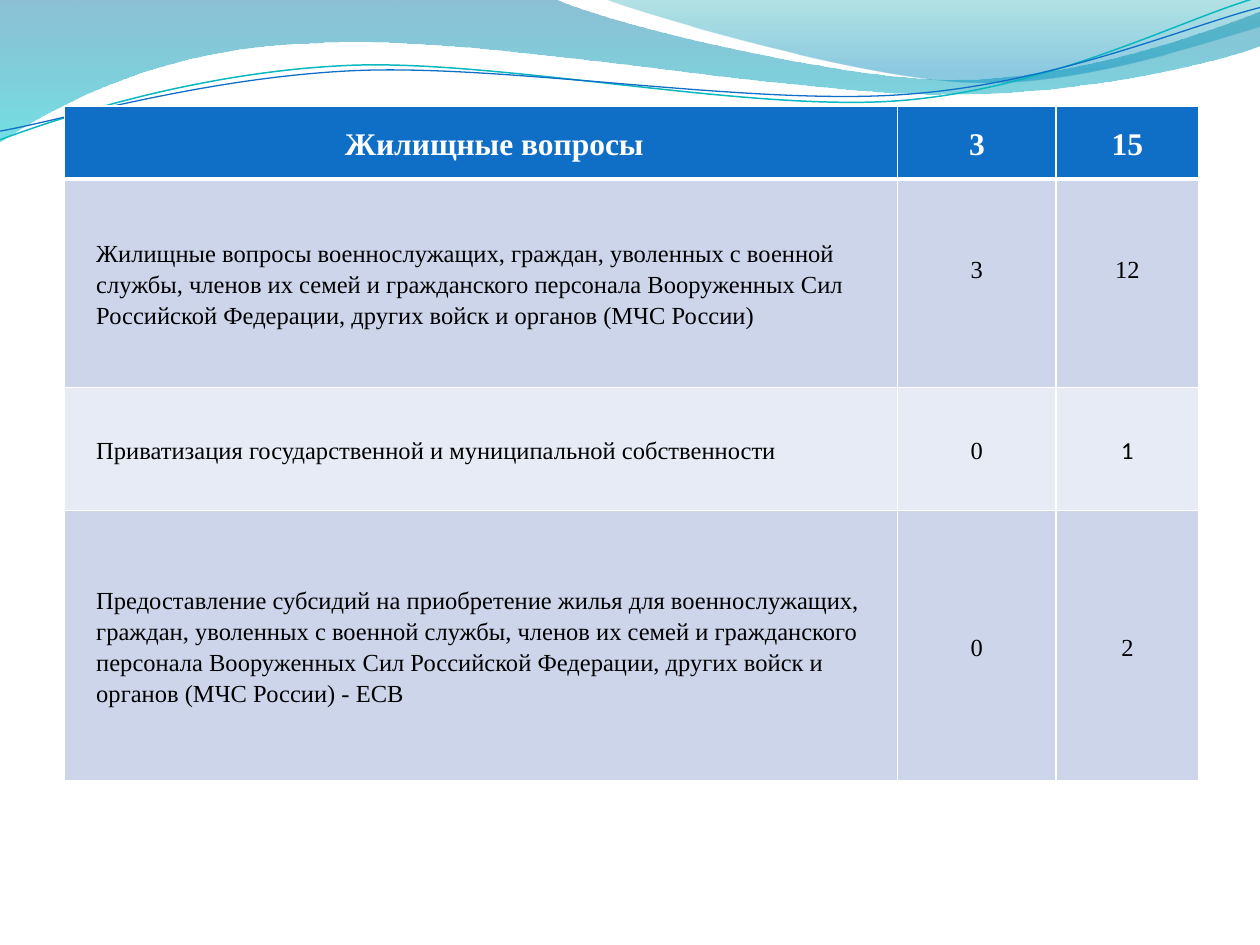
from dataclasses import dataclass

import lxml.etree
import pptx
import pptx.dml.color
import pptx.enum.text
import pptx.oxml.ns
import pptx.util

Pt = pptx.util.Pt
qn = pptx.oxml.ns.qn
ALIGN = pptx.enum.text.PP_ALIGN
MIDDLE = pptx.enum.text.MSO_ANCHOR.MIDDLE


@dataclass(frozen=True)
class Theme:
    serif: str = "Times New Roman"
    sans: str = "Calibri"
    header_size: int = 18
    body_size: int = 14
    blue: str = "0F6FC6"
    teal: str = "0AB8BF"
    white: str = "FFFFFF"
    black: str = "000000"
    bands: tuple = ("CCD5EA", "E7EBF5")
    # Gradient stops: position, colour, opacity in percent
    large_wave: tuple = ((0, "0074A1", 45), (1, "00C6CF", 55))
    small_wave: tuple = ((0, "00A1A9", 30), (0.8, "008BBF", 45))


THEME = Theme()

# Outlines in points: a segment of one point is a line, of three a Bezier curve
LARGE_WAVE = [
    [(0, 0)],
    [(316.8, -0.7)],
    [(342.7, 12.2), (478.1, 45.4), (545.8, 45.4)],
    [(614.2, 45.4), (689.8, 18.7), (720, 6.5)],
    [(720.7, 25.9)],
    [(707.8, 31.7), (626.4, 54.7), (537.1, 54)],
    [(447.8, 54), (275, 20.2), (185, 24.5)],
    [(92.9, 25.9), (33.1, 59.8), (-0.7, 81.4)],
]
SMALL_WAVE = [
    [(344.9, -0.7)],
    [(366.5, 7.9), (491, 44.6), (553.7, 46.8)],
    [(616.3, 49.7), (691.9, 23), (720, 15.1)],
    [(720, 0)],
]
TEAL_LINE = [
    [(0, 79.9)],
    [(34.6, 67), (113.8, 41), (199.4, 37.4)],
    [(284.4, 33.8), (427, 64.1), (513.4, 57.6)],
    [(599.8, 51.1), (675.4, 10.8), (718.6, -1.4)],
]
BLUE_LINE = [
    [(0, 74.9)],
    [(33.8, 69.1), (118.1, 43.9), (203.8, 40.3)],
    [(290.2, 36.7), (429.8, 60.5), (516.2, 54)],
    [(601.9, 48.2), (677.5, 15.1), (720, 4.3)],
]

ROWS = [
    ("Жилищные вопросы", "3", "15"),
    ("Жилищные вопросы военнослужащих, граждан, уволенных с военной службы, "
     "членов их семей и гражданского персонала Вооруженных Сил Российской "
     "Федерации, других войск и органов (МЧС России)", "3", "12"),
    ("Приватизация государственной и муниципальной собственности", "0", "1"),
    ("Предоставление субсидий на приобретение жилья для военнослужащих, "
     "граждан, уволенных с военной службы, членов их семей и гражданского "
     "персонала Вооруженных Сил Российской Федерации, других войск и органов "
     "(МЧС России) - ЕСВ", "0", "2"),
]
COLUMN_WIDTHS = (476, 90.5, 81.5)
ROW_HEIGHTS = (41.8, 119.2, 70.3, 154.5)
SANS_CELL = (2, 2)
RAISED_CELLS = {(1, 1), (1, 2)}


def rgb(colour):
    return pptx.dml.color.RGBColor.from_string(colour)


def apply(target, **values):
    for name, value in values.items():
        setattr(target, name, value)


def add_curve(slide, segments, closed):
    """Build an outline whose three-point segments are Bezier curves."""
    points = [(Pt(x), Pt(y)) for segment in segments for x, y in segment]
    builder = slide.shapes.build_freeform(*points[0])
    builder.add_line_segments(points[1:], close=closed)
    shape = builder.convert_to_shape()
    shape.shadow.inherit = False
    steps = iter(list(shape._element.iter(qn("a:lnTo"))))
    for segment in segments[1:]:
        group = [next(steps) for _ in segment]
        if len(group) == 3:
            curve = lxml.etree.Element(qn("a:cubicBezTo"))
            group[0].addprevious(curve)
            for step in group:
                curve.append(step[0])
                step.getparent().remove(step)
    return shape


def add_wave(slide, segments, stops):
    shape = add_curve(slide, segments, closed=True)
    shape.line.fill.background()
    shape.fill.gradient()
    shape.fill.gradient_angle = 270
    for stop, (position, colour, _) in zip(shape.fill.gradient_stops, stops):
        stop.position = position
        stop.color.rgb = rgb(colour)
    colours = shape._element.spPr.iter(qn("a:srgbClr"))
    for element, (_, _, opacity) in zip(list(colours), stops):
        lxml.etree.SubElement(element, qn("a:alpha"), val=str(opacity * 1000))


def add_wave_line(slide, segments, colour, width):
    shape = add_curve(slide, segments, closed=False)
    shape.fill.background()
    shape.line.color.rgb = rgb(colour)
    shape.line.width = Pt(width)


def set_borders(cell, **widths):
    properties = cell._tc.get_or_add_tcPr()
    for index, side in enumerate("LRTB"):
        width = Pt(widths.get(side, 1))
        border = lxml.etree.Element(qn(f"a:ln{side}"), w=str(width))
        fill = lxml.etree.SubElement(border, qn("a:solidFill"))
        lxml.etree.SubElement(fill, qn("a:srgbClr"), val=THEME.white)
        properties.insert(index, border)


def fill_cell(cell, text, row, column):
    header = row == 0
    apply(cell, text=text, vertical_anchor=MIDDLE,
          margin_left=Pt(3 if column else 18), margin_right=Pt(3),
          margin_top=Pt(3),
          margin_bottom=Pt(20 if (row, column) in RAISED_CELLS else 3))
    cell.fill.solid()
    cell.fill.fore_color.rgb = rgb(
        THEME.blue if header else THEME.bands[(row - 1) % 2])
    paragraph = cell.text_frame.paragraphs[0]
    apply(paragraph, line_spacing=1.15,
          alignment=ALIGN.CENTER if header or column else ALIGN.LEFT)
    font = paragraph.runs[0].font
    apply(font, bold=header,
          name=THEME.sans if (row, column) == SANS_CELL else THEME.serif,
          size=Pt(THEME.header_size if header else THEME.body_size))
    font.color.rgb = rgb(THEME.white if header else THEME.black)
    set_borders(cell, B=3 if header else 1, T=3 if row == 1 else 1)


def add_housing_table(slide):
    table = slide.shapes.add_table(
        len(ROWS), len(COLUMN_WIDTHS), Pt(37), Pt(60.5),
        Pt(sum(COLUMN_WIDTHS)), Pt(sum(ROW_HEIGHTS))).table
    apply(table, first_row=False, horz_banding=False)
    for column, width in zip(table.columns, COLUMN_WIDTHS):
        column.width = Pt(width)
    for row, height in zip(table.rows, ROW_HEIGHTS):
        row.height = Pt(height)
    for row, texts in enumerate(ROWS):
        for column, text in enumerate(texts):
            fill_cell(table.cell(row, column), text, row, column)


def main():
    presentation = pptx.Presentation()
    apply(presentation, slide_width=Pt(720), slide_height=Pt(540))
    slide = presentation.slides.add_slide(presentation.slide_layouts[6])
    add_wave(slide, LARGE_WAVE, THEME.large_wave)
    add_wave(slide, SMALL_WAVE, THEME.small_wave)
    add_wave_line(slide, TEAL_LINE, THEME.teal, 0.85)
    add_wave_line(slide, BLUE_LINE, THEME.blue, 0.75)
    add_housing_table(slide)
    presentation.save("out.pptx")


if __name__ == "__main__":
    main()
